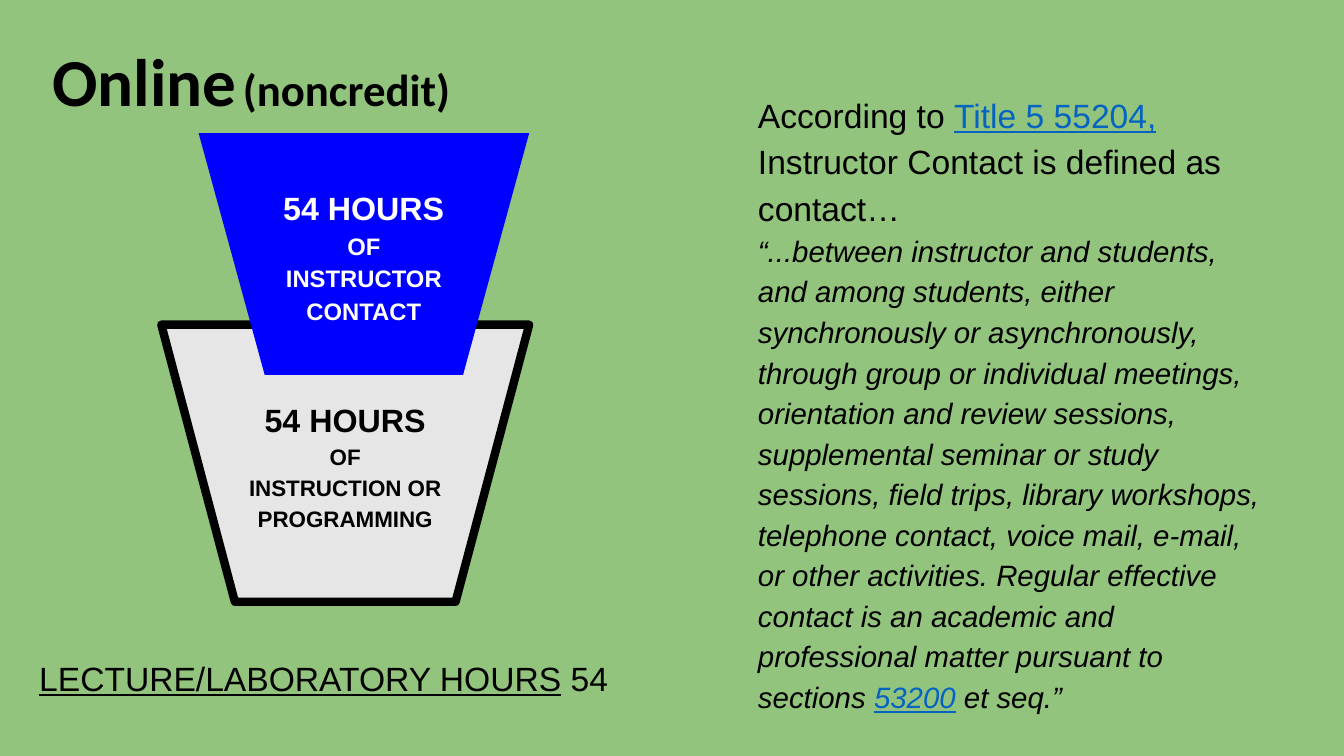
from lxml.etree import SubElement
from pptx import Presentation
from pptx.dml.color import RGBColor
from pptx.enum.shapes import MSO_SHAPE
from pptx.enum.text import MSO_ANCHOR, PP_ALIGN
from pptx.oxml.ns import qn
from pptx.util import Pt

THEME = {
    "color": {"back": "93C47D", "ink": "000000", "link": "0563C1",
              "blue": "0000FF", "grey": "E7E6E6", "white": "FFFFFF"},
    "size": {"title": 48, "gap": 19, "sub": 32, "body": 24, "quote": 21,
             "hours": 23, "label": 16, "top": 17},
    "head": "Calibri", "text": "Arial", "inset": 9.36, "space": 1.15, "edge": 6,
}

# Content: each paragraph is a list of (text, size, style) runs
TITLE = [[("Online", "title", "head"), (" ", "gap", "head"),
          ("(noncredit)", "sub", "head")]]
RULE = [
    [("According to ", "body", "plain"), ("Title 5 55204,", "body", "link"),
     (" Instructor Contact is defined as contact…", "body", "plain")],
    [("“...between instructor and students, and among students, either "
      "synchronously or asynchronously, through group or individual meetings, "
      "orientation and review sessions, supplemental seminar or study sessions, "
      "field trips, library workshops, telephone contact, voice mail, e-mail, "
      "or other activities. Regular effective contact is an academic and "
      "professional matter pursuant to sections ", "quote", "quote"),
     ("53200", "quote", "cite"), (" et seq.”", "quote", "quote")],
]
TOTAL = [[("LECTURE/LABORATORY HOURS", "body", "under"), (" 54", "body", "plain")]]
LOWER = [[("54 HOURS", "hours", "bold")], [("OF", "label", "bold")],
         [("INSTRUCTION OR PROGRAMMING", "label", "bold")]]
UPPER = [[("54 HOURS", "hours", "light"),
          (" OF INSTRUCTOR CONTACT", "top", "light")]]

STYLES = {
    "head": {"name": THEME["head"], "bold": True},
    "plain": {},
    "under": {"underline": True},
    "link": {"underline": True, "color": "link"},
    "quote": {"italic": True},
    "cite": {"italic": True, "underline": True, "color": "link"},
    "bold": {"bold": True},
    "light": {"bold": True, "color": "white"},
}

# Boxes: text, (left, top, width, height), anchor, line spacing
BOXES = [
    (TITLE, (28.08, 37.44, 447.84, 57.6), MSO_ANCHOR.BOTTOM, None),
    (RULE, (532.08, 54, 386.64, 406.08), MSO_ANCHOR.TOP, THEME["space"]),
    (TOTAL, (18.72, 460.08, 455.76, 43.92), MSO_ANCHOR.MIDDLE, THEME["space"]),
]
# Cups, back to front: text, place, fill, outline
CUPS = [
    (LOWER, (115.2, 231.84, 262.8, 198), "grey", "ink"),
    (UPPER, (141.84, 95.04, 236.16, 172.8), "blue", None),
]


def tint(key):
    return RGBColor.from_string(THEME["color"][key])


def write(shape, paras, anchor, space, align=PP_ALIGN.LEFT):
    frame = shape.text_frame
    inset = Pt(THEME["inset"])
    form = {"word_wrap": True, "vertical_anchor": anchor,
            "margin_left": inset, "margin_right": inset,
            "margin_top": inset, "margin_bottom": inset}
    for key, value in form.items():
        setattr(frame, key, value)
    for i, runs in enumerate(paras):
        para = frame.add_paragraph() if i else frame.paragraphs[0]
        para.alignment = align
        para.line_spacing = space
        for text, size, style in runs:
            run = para.add_run()
            run.text = text
            form = {"name": THEME["text"], "size": Pt(THEME["size"][size]),
                    "bold": False, **STYLES[style]}
            run.font.color.rgb = tint(form.pop("color", "ink"))
            for key, value in form.items():
                setattr(run.font, key, value)


def draw(slide, kind, place, fill, edge=None):
    shape = slide.shapes.add_shape(kind, *map(Pt, place))
    shape.shadow.inherit = False
    shape.fill.solid()
    shape.fill.fore_color.rgb = tint(fill)
    if edge:
        shape.line.color.rgb = tint(edge)
        shape.line.width = Pt(THEME["edge"])
        SubElement(shape.line._get_or_add_ln(), qn("a:round"))
    else:
        shape.line.fill.background()
    return shape


def main():
    deck = Presentation()
    deck.slide_width, deck.slide_height = Pt(960), Pt(540)
    slide = deck.slides.add_slide(deck.slide_layouts[6])

    # Green ground
    draw(slide, MSO_SHAPE.RECTANGLE, (-9.36, -7.92, 973.44, 548.64), "back")

    # Title, definition and total
    for text, place, anchor, space in BOXES:
        box = slide.shapes.add_textbox(*map(Pt, place))
        write(box, text, anchor, space)

    # Stacked cups
    for text, place, fill, edge in CUPS:
        cup = draw(slide, MSO_SHAPE.FLOWCHART_MANUAL_OPERATION, place, fill, edge)
        write(cup, text, MSO_ANCHOR.MIDDLE, THEME["space"], PP_ALIGN.CENTER)

    deck.save("out.pptx")


if __name__ == "__main__":
    main()
